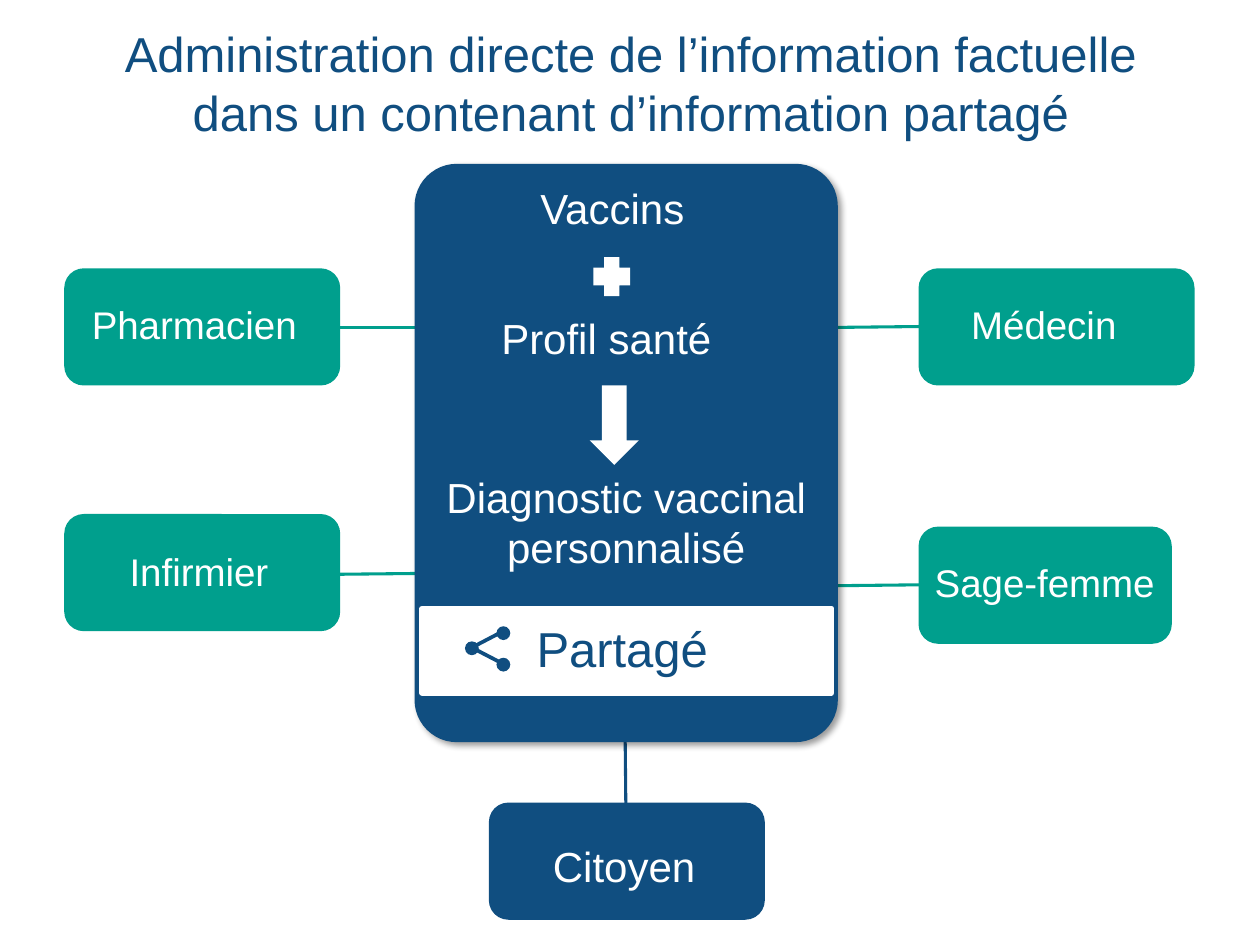
from pptx import Presentation
from pptx.dml.color import RGBColor
from pptx.enum.shapes import MSO_CONNECTOR, MSO_SHAPE
from pptx.enum.text import MSO_ANCHOR, PP_ALIGN
from pptx.oxml import parse_xml
from pptx.oxml.ns import nsdecls
from pptx.util import Inches, Pt

ROUNDED, RECTANGLE, OVAL = MSO_SHAPE.ROUNDED_RECTANGLE, MSO_SHAPE.RECTANGLE, MSO_SHAPE.OVAL
PLUS, DOWN_ARROW = MSO_SHAPE.CROSS, MSO_SHAPE.DOWN_ARROW
STRAIGHT = MSO_CONNECTOR.STRAIGHT
LEFT, CENTER = PP_ALIGN.LEFT, PP_ALIGN.CENTER
TOP, MIDDLE = MSO_ANCHOR.TOP, MSO_ANCHOR.MIDDLE

THEME = {
    "font": "Arial",
    "blue": RGBColor(0x10, 0x4E, 0x80),
    "green": RGBColor(0x00, 0x9F, 0x8D),
    "white": RGBColor(0xFF, 0xFF, 0xFF),
    "title": Pt(28),
    "body": Pt(24),
    "role": Pt(22),
    "connector": Pt(1.75),
}

presentation = Presentation()
presentation.slide_width, presentation.slide_height = Inches(10), Inches(7.5)
slide = presentation.slides.add_slide(presentation.slide_layouts[6])


def add_block(kind, position, color, adjustment=None, rotation=0):
    shape = slide.shapes.add_shape(kind, *map(Inches, position))
    shape.shadow.inherit = False
    shape.fill.solid()
    shape.fill.fore_color.rgb = THEME[color]
    shape.line.fill.background()
    shape.rotation = rotation
    if adjustment is not None:
        shape.adjustments[0] = adjustment
    return shape


def add_text(text, position, size, color="white", align=LEFT, anchor=TOP, wrap=False):
    text_frame = slide.shapes.add_textbox(*map(Inches, position)).text_frame
    text_frame.word_wrap = wrap
    text_frame.vertical_anchor = anchor
    text_frame.text = text
    font_format = {"name": THEME["font"], "size": THEME[size]}
    for paragraph in text_frame.paragraphs:
        paragraph.alignment = align
        for run in paragraph.runs:
            for attribute, value in font_format.items():
                setattr(run.font, attribute, value)
            run.font.color.rgb = THEME[color]


# Connectors, behind the boxes
connectors = [
    (4.96, 5.69, 4.97, 6.66, "blue"),
    (2.6, 2.6, 3.57, 2.6, "green"),
    (6.49, 2.6, 7.46, 2.59, "green"),
    (6.49, 4.65, 7.45, 4.64, "green"),
    (2.48, 4.56, 3.44, 4.55, "green"),
]
for *ends, color in connectors:
    connector = slide.shapes.add_connector(STRAIGHT, *map(Inches, ends))
    connector.line.color.rgb = THEME[color]
    connector.line.width = THEME["connector"]
    connector._element.spPr.append(parse_xml(f"<a:effectLst {nsdecls('a')}/>"))

# Shared container with its drop shadow
container = add_block(ROUNDED, (3.29, 1.3, 3.36, 4.59), "blue", 0.1)
container.shadow.inherit = True
container._element.spPr.append(parse_xml(
    f'<a:effectLst {nsdecls("a")}><a:outerShdw blurRad="50800" dist="38100" dir="2700000"'
    ' algn="tl" rotWithShape="0"><a:srgbClr val="000000"><a:alpha val="40000"/></a:srgbClr>'
    '</a:outerShdw></a:effectLst>'))

# Sharing band
band = add_block(RECTANGLE, (3.35, 4.83, 3.25, 0.67), "white")
band.line.color.rgb = THEME["white"]
band.line.width = Pt(3)
add_text("Partagé", (4.16, 4.86, 1.72, 0.57), "title", "blue", wrap=True)

# Sharing icon: two branches and three nodes
for top, rotation in [(5.19, 27.5), (5.06, 332.4)]:
    add_block(RECTANGLE, (3.77, top, 0.2, 0.03), "blue", rotation=rotation)
for left, top in [(3.69, 5.09), (3.94, 4.97), (3.94, 5.22)]:
    add_block(OVAL, (left, top, 0.11, 0.11), "blue")

# Title
add_text("Administration directe de l’information factuelle\vdans un contenant d’information partagé",
         (0.28, 0.16, 9.45, 0.99), "title", "blue", CENTER, MIDDLE, wrap=True)

# Container content
add_text("Vaccins", (4.19, 1.4, 1.36, 0.5), "body")
add_block(PLUS, (4.71, 2.04, 0.29, 0.31), "white", 0.29)
add_text("Profil santé", (3.88, 2.43, 1.89, 0.5), "body")
add_block(DOWN_ARROW, (4.68, 3.06, 0.39, 0.63), "white")
add_text("Diagnostic vaccinal\npersonnalisé", (3.43, 3.69, 3.08, 0.91), "body", align=CENTER)

# Participants: box left, top, width, then label left, top, width
participants = [
    ("Infirmier", 0.51, 4.08, 2.19, 0.93, 4.3, 1.32, "green", "role"),
    ("Pharmacien", 0.51, 2.13, 2.19, 0.63, 2.34, 1.85, "green", "role"),
    ("Sage-femme", 7.29, 4.18, 2.01, 7.32, 4.39, 1.97, "green", "role"),
    ("Médecin", 7.29, 2.13, 2.19, 7.61, 2.34, 1.37, "green", "role"),
    ("Citoyen", 3.88, 6.37, 2.19, 4.29, 6.62, 1.34, "blue", "body"),
]
for name, left, top, width, label_left, label_top, label_width, color, size in participants:
    add_block(ROUNDED, (left, top, width, 0.93), color)
    add_text(name, (label_left, label_top, label_width, 0.47), size)

presentation.save("out.pptx")
